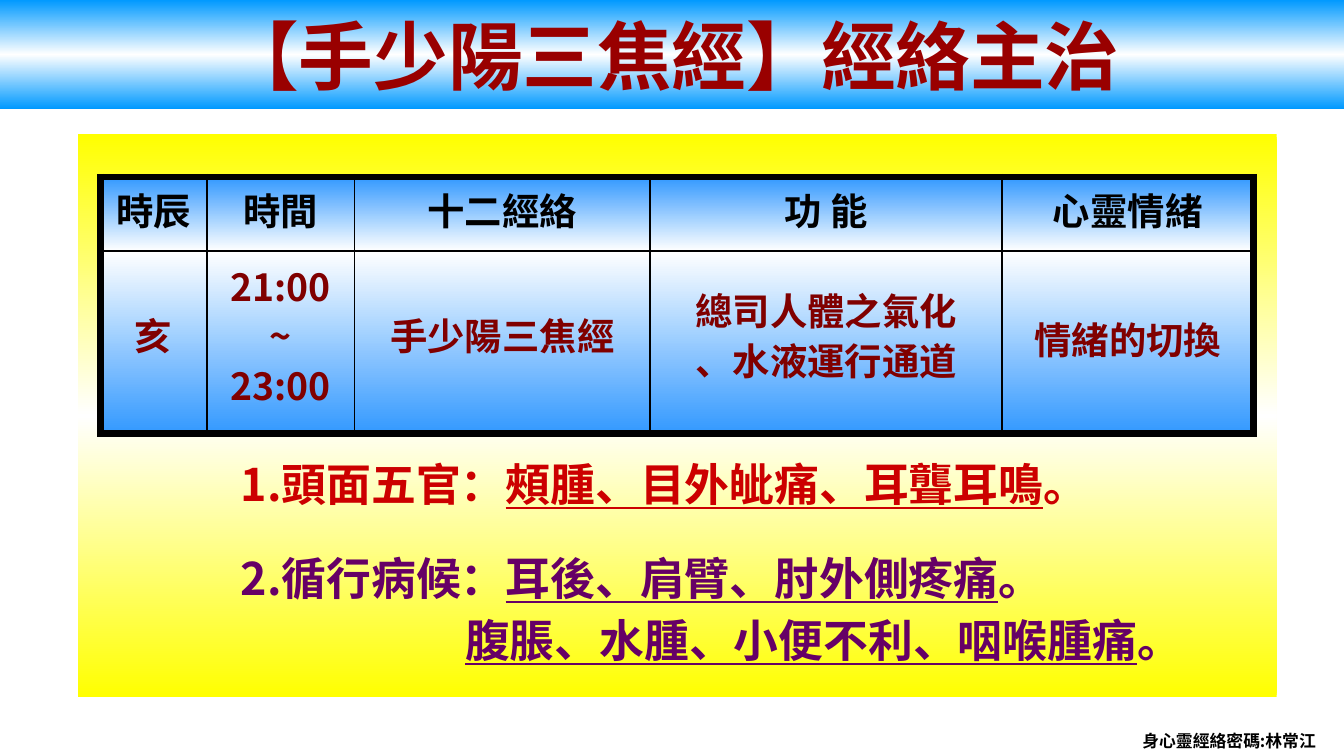
from lxml import etree
from pptx import Presentation
from pptx.dml.color import RGBColor
from pptx.enum.shapes import MSO_SHAPE
from pptx.enum.text import MSO_ANCHOR, PP_ALIGN
from pptx.oxml import parse_xml
from pptx.oxml.ns import nsdecls, qn
from pptx.util import Cm, Pt

RECT = MSO_SHAPE.RECTANGLE
TOP, MIDDLE = MSO_ANCHOR.TOP, MSO_ANCHOR.MIDDLE
LEFT, CENTER = PP_ALIGN.LEFT, PP_ALIGN.CENTER

FONT = "Noto Sans CJK TC"
COLORS = {
    "black": "000000", "white": "FFFFFF", "yellow": "FFFF00",
    "sky": "0099FF", "cell": "3399FF", "title": "990000",
    "maroon": "800000", "red": "CC0000", "purple": "660066",
}
HEADERS = ["時辰", "時間", "十二經絡", "功 能", "心靈情緒"]
VALUES = [["亥"], ["21:00", "~", "23:00"], ["手少陽三焦經"],
          ["總司人體之氣化", "、水液運行通道"], ["情緒的切換"]]
COL_WIDTHS = [2.01, 2.79, 5.59, 6.65, 4.75]
ROW_HEIGHTS = [1.4, 3.45]
SYMPTOMS = [
    ("1.頭面五官：", "頰腫、目外皉痛、耳聾耳鳴", "red", 2.9, 0),
    ("2.循行病候：", "耳後、肩臂、肘外側疼痛", "purple", 2.9, 17.2),
    ("", "腹脹、水腫、小便不利、咽喉腫痛", "purple", 7.14, 0),
]


def add_gradient(props, names):
    step = 100000 // (len(names) - 1)
    stops = "".join(
        f'<a:gs pos="{i * step}"><a:srgbClr val="{COLORS[name]}"/></a:gs>'
        for i, name in enumerate(names))
    props.append(parse_xml(
        f'<a:gradFill {nsdecls("a")} rotWithShape="1"><a:gsLst>{stops}</a:gsLst>'
        '<a:lin ang="5400000" scaled="0"/></a:gradFill>'))


def add_run(p, text, size, color, underline=False):
    r = p.add_run()
    r.text = text
    values = {"size": Pt(size), "bold": True, "underline": underline, "name": FONT}
    for key, value in values.items():
        setattr(r.font, key, value)
    r.font.color.rgb = RGBColor.from_string(COLORS[color])
    ea = etree.SubElement(r.font._element, qn("a:ea"))
    ea.set("typeface", FONT)


def set_frame(tf, anchor, wrap=True, top=0.1):
    values = {"word_wrap": wrap, "vertical_anchor": anchor,
              "margin_left": Cm(0.18), "margin_right": Cm(0.18),
              "margin_top": Cm(top), "margin_bottom": Cm(0.1)}
    for key, value in values.items():
        setattr(tf, key, value)


def add_band(s, box, names):
    sp = s.shapes.add_shape(RECT, *map(Cm, box))
    add_gradient(sp._element.spPr, names)
    sp.line.fill.background()
    sp.shadow.inherit = False
    return sp


def add_title(s, box):
    tf = add_band(s, box, ["sky", "white", "sky"]).text_frame
    set_frame(tf, MIDDLE)
    p = tf.paragraphs[0]
    p.alignment = CENTER
    add_run(p, "【手少陽三焦經】經絡主治", 40, "title")


def add_symptoms(s, box):
    tf = add_band(s, box, ["yellow", "white", "yellow"]).text_frame
    set_frame(tf, TOP, top=5.93)
    for i, (label, text, color, indent, gap) in enumerate(SYMPTOMS):
        p = tf.add_paragraph() if i else tf.paragraphs[0]
        p._p.get_or_add_pPr().set("marL", str(Cm(indent)))
        p.alignment = LEFT
        p.line_spacing = Pt(33.2)
        p.space_before = Pt(gap)
        if label:
            add_run(p, label, 24, color)
        add_run(p, text, 24, color, True)
        add_run(p, "。", 24, color)


def add_borders(cell, thick_sides):
    tc_pr = cell._tc.get_or_add_tcPr()
    for side in "LRTB":
        width = Pt(4 if side in thick_sides else 1)
        tc_pr.append(parse_xml(
            f'<a:ln{side} {nsdecls("a")} w="{width}"><a:solidFill>'
            f'<a:srgbClr val="{COLORS["black"]}"/></a:solidFill></a:ln{side}>'))


def fill_cell(cell, lines, header):
    names = ["cell", "white"] if header else ["white", "cell"]
    add_gradient(cell._tc.get_or_add_tcPr(), names)
    values = {"vertical_anchor": TOP if header else MIDDLE,
              "margin_left": Cm(0.25), "margin_right": Cm(0.25),
              "margin_top": Cm(0.1), "margin_bottom": Cm(0.1)}
    for key, value in values.items():
        setattr(cell, key, value)
    tf = cell.text_frame
    for i, line in enumerate(lines):
        p = tf.add_paragraph() if i else tf.paragraphs[0]
        p.alignment = CENTER
        if not header:
            p.line_spacing = 0.5
        if i:
            p.space_before = Pt(12)
        add_run(p, line, 20, "black" if header else "maroon")


def add_meridian_table(s, box):
    rows = [[[text] for text in HEADERS], VALUES]
    last = len(HEADERS) - 1
    table = s.shapes.add_table(len(rows), len(HEADERS), *map(Cm, box)).table
    table.first_row = table.horz_banding = False
    for col, width in zip(table.columns, COL_WIDTHS):
        col.width = Cm(width)
    for i, height in enumerate(ROW_HEIGHTS):
        table.rows[i].height = Cm(height)
        for j, lines in enumerate(rows[i]):
            cell = table.cell(i, j)
            thick = "B" if i else "T"
            thick += {0: "L", last: "R"}.get(j, "")
            add_borders(cell, thick)
            fill_cell(cell, lines, i == 0)
    table.cell(1, last).margin_top = Cm(0.25)


def add_footer(s, box):
    tf = s.shapes.add_textbox(*map(Cm, box)).text_frame
    set_frame(tf, TOP, wrap=False)
    add_run(tf.paragraphs[0], "身心靈經絡密碼:林常江", 9, "black")


def main():
    prs = Presentation()
    prs.slide_width, prs.slide_height = Cm(25.4), Cm(14.29)
    s = prs.slides.add_slide(prs.slide_layouts[6])
    add_symptoms(s, (1.47, 2.54, 22.66, 10.64))
    add_meridian_table(s, (1.9, 3.35, sum(COL_WIDTHS), sum(ROW_HEIGHTS)))
    add_title(s, (0, 0, 25.4, 2.06))
    add_footer(s, (21.41, 13.72, 3.99, 0.58))
    prs.save("out.pptx")


if __name__ == "__main__":
    main()
